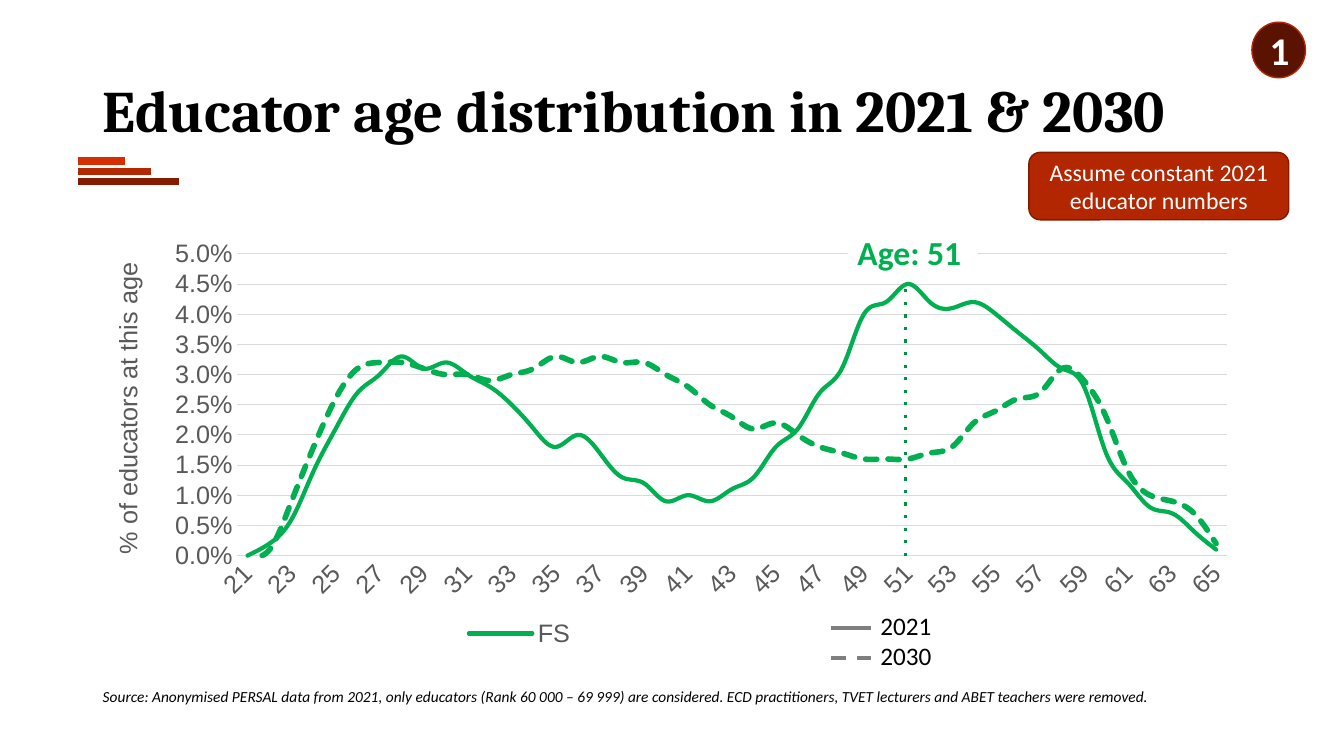
from pptx import Presentation, util as u
from pptx.chart.data import CategoryChartData
from pptx.dml.color import RGBColor
from pptx.enum import chart as kinds, dml, shapes, text
from pptx.oxml import parse_xml
from pptx.oxml.ns import nsdecls, qn

HUES = {"black": "000000", "white": "FFFFFF", "dark": "591300", "deep": "851C00",
        "rust": "B22600", "edge": "811B00", "flame": "D62E00", "green": "00B050",
        "peak": "009242", "key": "7F7F7F", "label": "595959", "grid": "D9D9D9"}
AGES = range(21, 66)
# Share of educators at each age, in tenths of a percent
NOW = [0, 2, 6, 14, 21, 27, 30, 33, 31, 32, 30, 28, 25, 21, 18, 20, 17, 13, 12, 9, 10, 9, 11,
       13, 18, 21, 27, 31, 40, 42, 45, 42, 41, 42, 40, 37, 34, 31, 28, 17, 12, 8, 7, 4, 1]
LATER = [0, 1, 9, 18, 26, 31, 32, 32, 31, 30, 30, 29, 30, 31, 33, 32, 33, 32, 32, 30, 28, 25, 23,
         21, 22, 20, 18, 17, 16, 16, 16, 17, 18, 22, 24, 26, 27, 31, 29, 23, 14, 10, 9, 7, 2]


def hue(name):
    return RGBColor.from_string(HUES[name])


def cms(*sizes):
    return [u.Cm(size) for size in sizes]


def style(font, face, size, tint, bold=False, slant=False):
    font.name, font.size = face, u.Pt(size)
    font.bold, font.italic = bold, slant
    font.color.rgb = hue(tint)


def write(shape, words, size, tint, face="Calibri", bold=False, slant=False,
          align=text.PP_ALIGN.CENTER, anchor=text.MSO_ANCHOR.MIDDLE, space=None):
    frame = shape.text_frame
    frame.text, frame.word_wrap, frame.vertical_anchor = words, True, anchor
    for para in frame.paragraphs:
        para.alignment, para.line_spacing = align, space
        for run in para.runs:
            style(run.font, face, size, tint, bold, slant)


def label(slide, box, words, size, **look):
    write(slide.shapes.add_textbox(*cms(*box)), words, size, "black", **look)


def block(slide, kind, box, fill, edge=None):
    shape = slide.shapes.add_shape(kind, *cms(*box))
    shape.shadow.inherit = False
    shape.fill.solid()
    shape.fill.fore_color.rgb = hue(fill)
    if edge:
        shape.line.color.rgb, shape.line.width = hue(edge), u.Pt(1)
    else:
        shape.line.fill.background()
    return shape


def rule(slide, ends, tint, width, dash=None):
    rod = slide.shapes.add_connector(shapes.MSO_CONNECTOR.STRAIGHT, *cms(*ends))
    rod.line.color.rgb, rod.line.width = hue(tint), u.Pt(width)
    if dash:
        rod.line.dash_style = dml.MSO_LINE.DASH
        rod.line._ln.find(qn("a:prstDash")).set("val", dash)
    rod._element.spPr.append(parse_xml(f"<a:effectLst {nsdecls('a')}/>"))


def place(part, spot, inner=False, **sides):
    """Give a chart part a manual layout, as its child number spot."""
    for old in part.findall(qn("c:layout")):
        part.remove(old)
    tags = '<c:layoutTarget val="inner"/>' if inner else ""
    tags += "".join(f'<c:{side}Mode val="edge"/>' for side in "xy")
    tags += "".join(f'<c:{side} val="{size}"/>' for side, size in sides.items())
    part.insert(spot, parse_xml(
        f"<c:layout {nsdecls('c')}><c:manualLayout>{tags}</c:manualLayout></c:layout>"))


def curve(series, width, dash=None):
    series.smooth = True
    series.marker.style = kinds.XL_MARKER_STYLE.NONE
    line = series.format.line
    line.color.rgb, line.width = hue("green"), u.Pt(width)
    line._ln.set("cap", "rnd")
    if dash:
        line.dash_style = dash


def axes(chart):
    ages, share = chart.category_axis, chart.value_axis
    for axis in (ages, share):
        axis.major_tick_mark = axis.minor_tick_mark = kinds.XL_TICK_MARK.NONE
        style(axis.tick_labels.font, "Arial", 18, "label")
    ages.format.line.color.rgb, ages.format.line.width = hue("grid"), u.Pt(0.75)
    ages._element.find(qn("c:txPr")).find(qn("a:bodyPr")).set("rot", "-2700000")
    skip = parse_xml(f'<c:tickLblSkip {nsdecls("c")} val="2"/>')
    ages._element.find(qn("c:noMultiLvlLbl")).addprevious(skip)

    share.minimum_scale, share.maximum_scale, share.major_unit = 0, 0.05, 0.005
    share.tick_labels.number_format = "0.0%"
    share.tick_labels.number_format_is_linked = False
    share.format.line.fill.background()
    grid = share.major_gridlines.format.line
    grid.color.rgb, grid.width = hue("grid"), u.Pt(0.75)
    title = share.axis_title
    title.text_frame.text = "% of educators at this age"
    style(title.text_frame.paragraphs[0].runs[0].font, "Arial", 18, "label")
    title.text_frame._txBody.find(qn("a:bodyPr")).set("rot", "-5400000")
    place(title._element, 1, x=0.03, y=0.09)


def legend(chart):
    """Show one entry for the province; the years have their own key."""
    chart.has_legend = True
    box = chart.legend
    box.position = kinds.XL_LEGEND_POSITION.BOTTOM
    box.include_in_layout = False
    style(box.font, "Arial", 18, "label")
    place(box._element, 1, x=0.33, y=0.88)
    box._element.insert(1, parse_xml(
        f'<c:legendEntry {nsdecls("c")}><c:idx val="1"/><c:delete val="1"/></c:legendEntry>'))


def graph(slide, box):
    data = CategoryChartData(number_format="0.0%")
    data.categories = [str(age) for age in AGES]
    for name, shares in (("FS", NOW), ("FS '30", LATER)):
        data.add_series(name, [share / 1000 for share in shares])
    chart = slide.shapes.add_chart(kinds.XL_CHART_TYPE.LINE, *cms(*box), data).chart
    chart.has_title = False
    style(chart.font, "Arial", 18, "black")
    now, later = chart.plots[0].series
    curve(now, 3)
    curve(later, 4, dml.MSO_LINE.SQUARE_DOT)
    axes(chart)
    legend(chart)
    place(chart._chartSpace.chart.plotArea, 0, inner=True, x=0.14, y=0.08, w=0.84, h=0.67)


def main():
    deck = Presentation()
    deck.slide_width, deck.slide_height = cms(33.87, 19.05)
    slide = deck.slides.add_slide(deck.slide_layouts[6])
    kind, left = shapes.MSO_SHAPE, text.PP_ALIGN.LEFT

    for y, end, tint in ((4.57, 4.5, "deep"), (4.32, 3.81, "rust"), (4.06, 3.15, "flame")):
        rule(slide, (1.96, y, end, y), tint, 5.5)
    label(slide, (2.34, 1.02, 29.21, 3.68), "Educator age distribution in 2021 & 2030", 42,
          face="Cambria", bold=True, align=left, space=0.9)
    badge = block(slide, kind.OVAL, (31.55, 0.56, 1.35, 1.4), "dark", "rust")
    write(badge, "1", 28, "white", bold=True)
    label(slide, (2.34, 17.09, 29.21, 0.94),
          "Source: Anonymised PERSAL data from 2021, only educators (Rank 60 000 – 69 999) are "
          "considered. ECD practitioners, TVET lecturers and ABET teachers were removed.",
          11, slant=True, align=left)

    graph(slide, (1.8, 5.49, 29.72, 11.35))
    block(slide, kind.RECTANGLE, (18.82, 15.42, 5.08, 1.45), "white")
    label(slide, (21.74, 15.29, 2.18, 1.7), "2021\n2030", 18)
    note = block(slide, kind.ROUNDED_RECTANGLE, (25.93, 3.84, 6.55, 1.7), "rust", "edge")
    write(note, "Assume constant 2021 educator numbers", 17, "white")
    rule(slide, (22.83, 7.29, 22.83, 14.02), "peak", 2.25, "dot")
    peak = block(slide, kind.RECTANGLE, (21.36, 5.72, 3.28, 1.17), "white")
    write(peak, "Age: 51", 24, "green", bold=True, align=left, anchor=text.MSO_ANCHOR.TOP)
    for y, dash in ((15.82, None), (16.59, "dash")):
        rule(slide, (20.93, y, 21.95, y), "key", 2.75, dash)
    deck.save("out.pptx")


if __name__ == "__main__":
    main()
